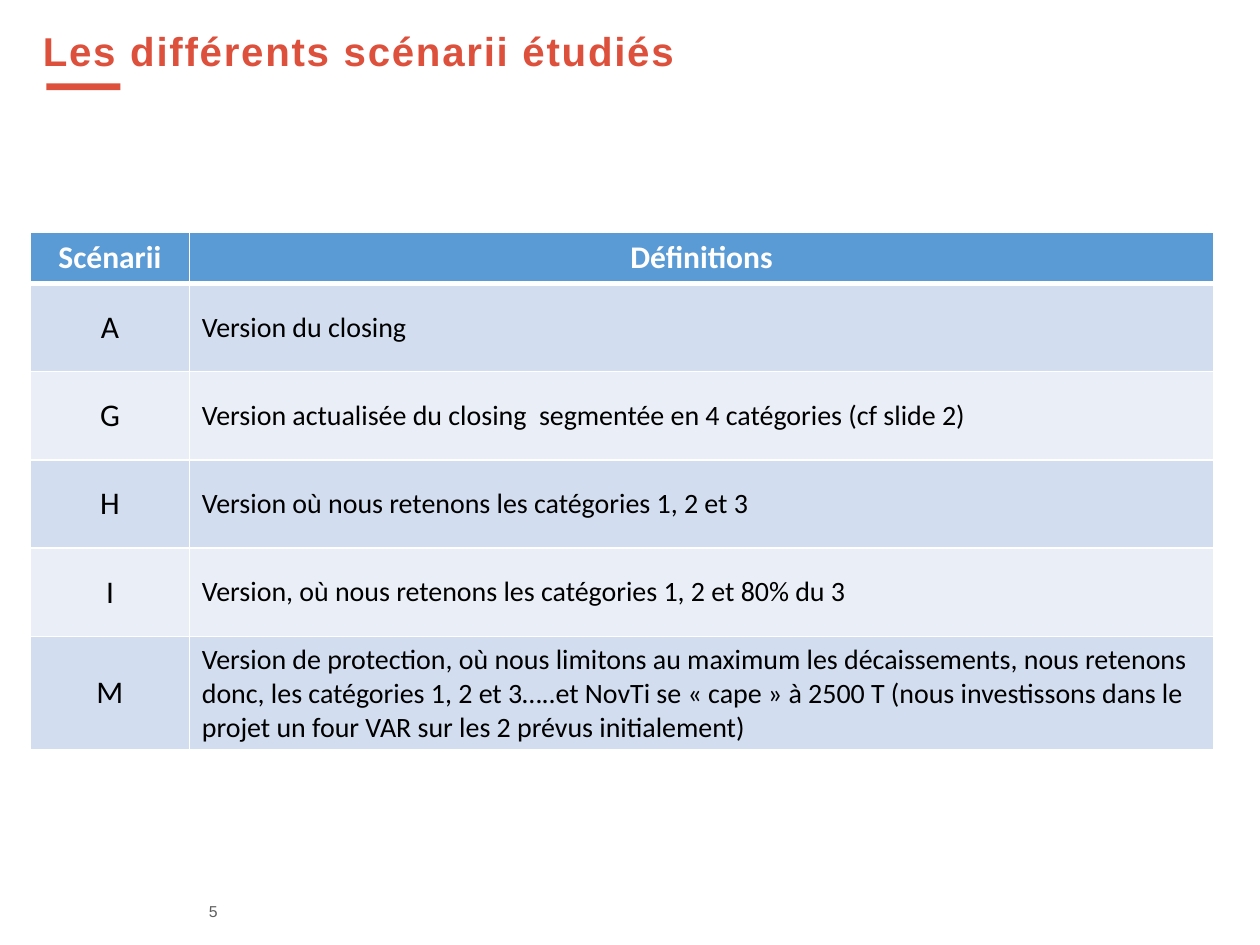
import pptx
import pptx.dml.color
import pptx.enum.shapes
import pptx.enum.text
import pptx.oxml
import pptx.oxml.ns
import pptx.util

Pt = pptx.util.Pt
RGBColor = pptx.dml.color.RGBColor
ANCHOR = pptx.enum.text.MSO_ANCHOR
ALIGN = pptx.enum.text.PP_ALIGN

RED = RGBColor(0xDD, 0x50, 0x3C)
GREY = RGBColor(0x5F, 0x5F, 0x5F)
BLACK = RGBColor(0, 0, 0)
WHITE = RGBColor(0xFF, 0xFF, 0xFF)
HEADER_BLUE = RGBColor(0x5B, 0x9B, 0xD5)
BANDS = (RGBColor(0xD2, 0xDE, 0xEF), RGBColor(0xEA, 0xEF, 0xF7))

SCENARIOS = (
    ("A", "Version du closing"),
    ("G", "Version actualisée du closing  segmentée en 4 catégories (cf slide 2)"),
    ("H", "Version où nous retenons les catégories 1, 2 et 3"),
    ("I", "Version, où nous retenons les catégories 1, 2 et 80% du 3"),
    ("M", "Version de protection, où nous limitons au maximum les décaissements, "
          "nous retenons donc, les catégories 1, 2 et 3…..et NovTi se « cape » à 2500 T "
          "(nous investissons dans le projet un four VAR sur les 2 prévus initialement)"),
)


class SlideBuilder:
    """Holds the style and the current slide, and adds each kind of element."""

    heading_font = "Arial"
    table_font = "Calibri"

    def __init__(self, presentation):
        self.slide = presentation.slides.add_slide(presentation.slide_layouts[5])

    def add_text(self, frame, text, font, size, color, bold=False, align=ALIGN.LEFT):
        paragraph = frame.paragraphs[0]
        paragraph.alignment = align
        run = paragraph.add_run()
        run.text = text
        run.font.name = font
        run.font.size = Pt(size)
        run.font.bold = bold
        run.font.color.rgb = color
        return paragraph

    def title(self, text, left, top, width, height):
        shape = self.slide.shapes.title
        shape.left, shape.top, shape.width, shape.height = map(Pt, (left, top, width, height))
        frame = shape.text_frame
        frame.vertical_anchor = ANCHOR.TOP
        frame.auto_size = pptx.enum.text.MSO_AUTO_SIZE.NONE
        paragraph = self.add_text(frame, text, self.heading_font, 23, RED, bold=True)
        paragraph.line_spacing = 0.9
        paragraph.runs[0].font._element.set("spc", "100")

    def bar(self, left, top, width, height):
        kind = pptx.enum.shapes.MSO_SHAPE.RECTANGLE
        shape = self.slide.shapes.add_shape(kind, *map(Pt, (left, top, width, height)))
        shape.shadow.inherit = False
        shape.fill.solid()
        shape.fill.fore_color.rgb = RED
        shape.line.fill.background()

    def page_number(self, text, left, top, width, height):
        shape = self.slide.shapes.add_textbox(*map(Pt, (left, top, width, height)))
        frame = shape.text_frame
        frame.word_wrap = True
        frame.vertical_anchor = ANCHOR.MIDDLE
        frame.margin_top = frame.margin_bottom = 0
        self.add_text(frame, text, self.heading_font, 9, GREY)

    def borders(self, cell, top, bottom):
        properties = cell._tc.get_or_add_tcPr()
        for side, width in (("L", 1), ("R", 1), ("T", top), ("B", bottom)):
            properties.append(pptx.oxml.parse_xml(
                f'<a:ln{side} {pptx.oxml.ns.nsdecls("a")} w="{Pt(width)}">'
                f'<a:solidFill><a:srgbClr val="{WHITE}"/></a:solidFill></a:ln{side}>'))

    def cell(self, cell, text, size, color, fill, align, bold=False, top=1, bottom=1):
        self.borders(cell, top, bottom)
        cell.fill.solid()
        cell.fill.fore_color.rgb = fill
        cell.vertical_anchor = ANCHOR.MIDDLE
        self.add_text(cell.text_frame, text, self.table_font, size, color, bold, align)

    def table(self, headings, rows, left, top, widths, header_height, row_height):
        height = header_height + row_height * len(rows)
        frame = self.slide.shapes.add_table(
            len(rows) + 1, len(widths), *map(Pt, (left, top, sum(widths), height)))
        table = frame.table
        for column, width in zip(table.columns, widths):
            column.width = Pt(width)
        for row in table.rows:
            row.height = Pt(row_height)
        table.rows[0].height = Pt(header_height)
        for column, heading in enumerate(headings):
            self.cell(table.cell(0, column), heading, 18, WHITE, HEADER_BLUE,
                      ALIGN.CENTER, bold=True, bottom=3)
        for number, (name, definition) in enumerate(rows, start=1):
            fill = BANDS[(number - 1) % 2]
            top_line = 3 if number == 1 else 1
            self.cell(table.cell(number, 0), name, 18, BLACK, fill, ALIGN.CENTER, top=top_line)
            self.cell(table.cell(number, 1), definition, 16, BLACK, fill, ALIGN.LEFT, top=top_line)


def main():
    presentation = pptx.Presentation()
    presentation.slide_width = Pt(720)
    presentation.slide_height = Pt(540)
    builder = SlideBuilder(presentation)
    builder.page_number("5", 112.3, 514, 26.6, 13)
    builder.title("Les différents scénarii étudiés", 17.3, 14.4, 621.4, 51.8)
    builder.bar(26.6, 47.7, 42.3, 3.8)
    builder.table(("Scénarii", "Définitions"), SCENARIOS, 17.5, 132.8, (90.7, 585.4), 29.2, 50.4)
    presentation.save("out.pptx")


if __name__ == "__main__":
    main()
